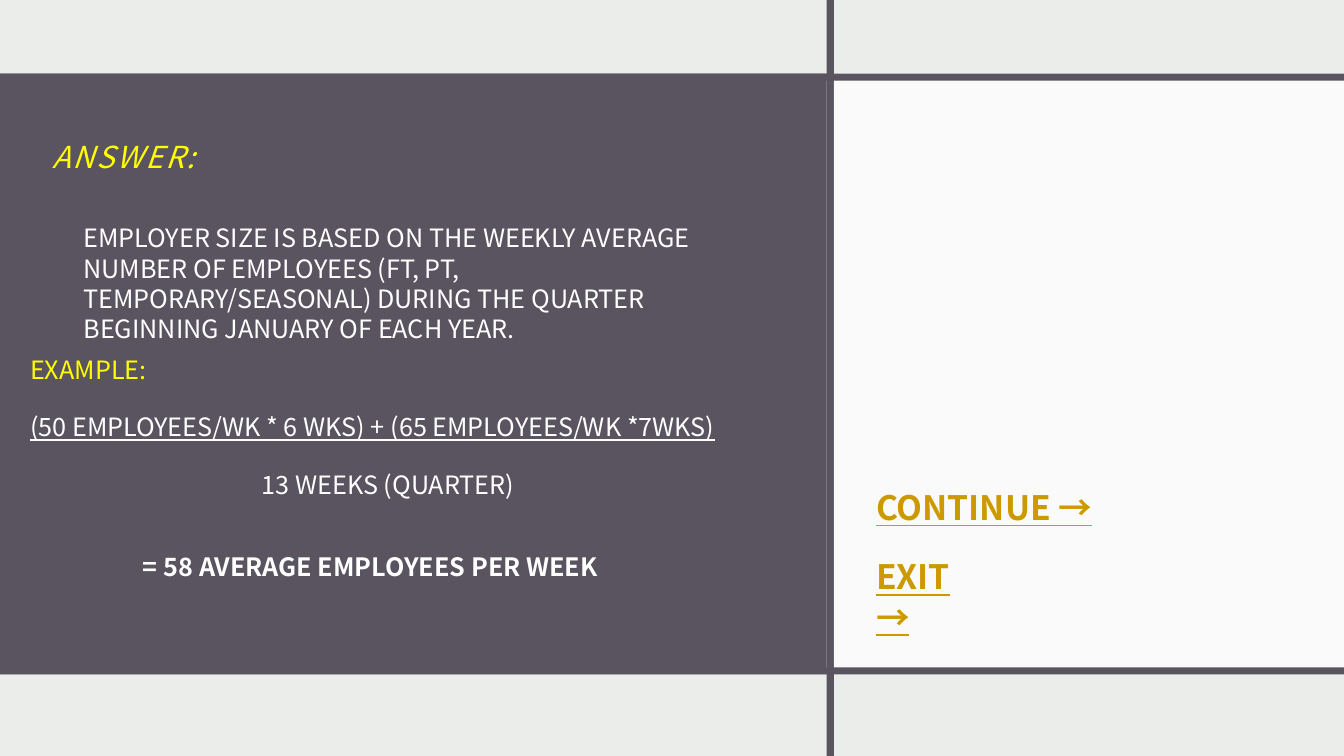
"""Build the employer size answer slide."""
from lxml import etree
from pptx import Presentation
from pptx.dml.color import RGBColor
from pptx.enum import shapes, text
from pptx.oxml import ns
from pptx.util import Inches, Pt

FONT = "Noto Sans CJK JP"
PALE = RGBColor(0xEB, 0xED, 0xEB)
PLUM = RGBColor(0x59, 0x54, 0x60)
WHITE = RGBColor(0xFF, 0xFF, 0xFF)
YELLOW = RGBColor(0xFF, 0xFF, 0x00)
GOLD = RGBColor(0xCC, 0x99, 0x00)

WIDTH, HEIGHT = 13.33, 7.5
BAND_TOP, BAND_HEIGHT = 0.73, 5.96
PANEL_WIDTH, RULE = 8.2, 0.07
PANE_LEFT = PANEL_WIDTH + RULE
LEFT, CENTER = text.PP_ALIGN.LEFT, text.PP_ALIGN.CENTER

TITLE = "ANSWER:"
BLOCKS = [
    (0, 0, WIDTH, HEIGHT, PALE, 100),
    (0, BAND_TOP, PANEL_WIDTH, BAND_HEIGHT, PLUM, 100),
    (PANEL_WIDTH, 0, RULE, HEIGHT, PLUM, 100),
    (PANE_LEFT, BAND_TOP, WIDTH - PANE_LEFT, BAND_HEIGHT, WHITE, 75),
    (0, BAND_TOP, WIDTH, RULE, PLUM, 100),
    (0, BAND_TOP + BAND_HEIGHT - RULE, WIDTH, RULE, PLUM, 100),
]
TEXTS = [
    ("EMPLOYER SIZE IS BASED ON THE WEEKLY AVERAGE NUMBER OF EMPLOYEES "
     "(FT, PT, TEMPORARY/SEASONAL) DURING THE QUARTER BEGINNING JANUARY "
     "OF EACH YEAR.", (0.73, 2.16, 6.58, 1.31), 18, WHITE, False, False, LEFT),
    ("EXAMPLE:", (0.2, 3.47, 1.85, 0.4), 18, YELLOW, False, False, LEFT),
    ("(50 EMPLOYEES/WK * 6 WKS) + (65 EMPLOYEES/WK *7WKS)",
     (0.2, 4.03, 7.95, 0.4), 18, WHITE, False, True, LEFT),
    ("13 WEEKS (QUARTER)", (0.73, 4.61, 6.24, 0.4), 18, WHITE, False, False, CENTER),
    ("= 58 AVERAGE EMPLOYEES PER WEEK", (1.32, 5.42, 5.66, 0.4), 18, WHITE,
     True, False, LEFT),
    ("CONTINUE →", (8.59, 4.78, 4.08, 0.5), 24, GOLD, True, True, LEFT),
    ("EXIT →", (8.59, 5.47, 1.18, 0.9), 24, GOLD, True, True, LEFT),
]


def add_block(s, left, top, width, height, color, opacity):
    sp = s.shapes.add_shape(shapes.MSO_SHAPE.RECTANGLE,
                            *map(Inches, (left, top, width, height)))
    sp.shadow.inherit = False
    sp.line.fill.background()
    sp.fill.solid()
    sp.fill.fore_color.rgb = color
    if opacity < 100:
        clr = sp.fill._xPr.find(".//" + ns.qn("a:srgbClr"))
        etree.SubElement(clr, ns.qn("a:alpha"), val=str(opacity * 1000))


def set_text(sp, words, size, color, align):
    tf = sp.text_frame
    tf.text = words
    tf.word_wrap = True
    p = tf.paragraphs[0]
    p.alignment = align
    r = p.runs[0]
    r.font.name, r.font.size = FONT, Pt(size)
    r.font.color.rgb = color
    for tag in ("a:ea", "a:cs"):
        etree.SubElement(r.font._element, ns.qn(tag), typeface=FONT)
    return r


def add_title(s):
    sp = s.shapes.title
    s.shapes._spTree.append(sp._element)
    sp.left, sp.top, sp.width, sp.height = map(Inches, (0.4, 1.28, 6.57, 0.43))
    r = set_text(sp, TITLE, 21.6, YELLOW, LEFT)
    r.font.italic = True
    r.font._element.set("spc", "150")
    tf = sp.text_frame
    tf.auto_size = text.MSO_AUTO_SIZE.NONE
    tf.vertical_anchor = text.MSO_ANCHOR.MIDDLE
    tf.margin_left = tf.margin_top = tf.margin_right = Inches(0.12)
    tf.margin_bottom = Inches(0.1)
    tf.paragraphs[0].line_spacing = 1.25


def main():
    prs = Presentation()
    prs.slide_width, prs.slide_height = Inches(WIDTH), Inches(HEIGHT)
    s = prs.slides.add_slide(prs.slide_layouts[5])
    s.background.fill.solid()
    s.background.fill.fore_color.rgb = PALE
    for block in BLOCKS:
        add_block(s, *block)
    add_title(s)
    for words, box, size, color, bold, underline, align in TEXTS:
        sp = s.shapes.add_textbox(*map(Inches, box))
        r = set_text(sp, words, size, color, align)
        r.font.bold, r.font.underline = bold, underline
    prs.save("out.pptx")


if __name__ == "__main__":
    main()
